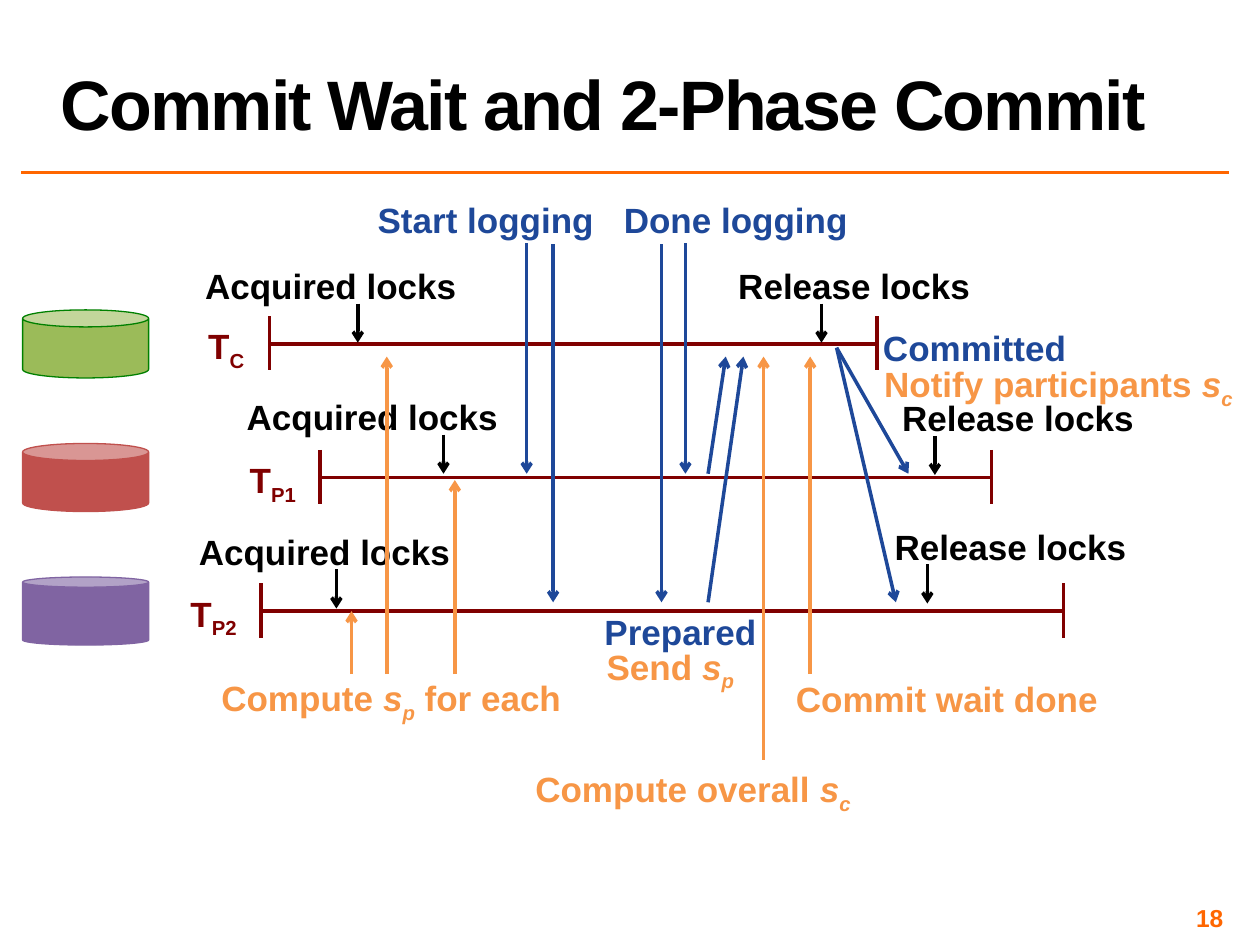
"""Build a slide on commit wait and two-phase commit as three timelines."""
import lxml.etree
import pptx
import pptx.dml.color
import pptx.enum.shapes
import pptx.enum.text
import pptx.oxml.ns
import pptx.util

Inches = pptx.util.Inches
Pt = pptx.util.Pt
ALIGN = pptx.enum.text.PP_ALIGN
ANCHOR = pptx.enum.text.MSO_ANCHOR

THEME = {
    "font": "Arial", "title": 40, "label": 20, "page": 14, "line": 2, "edge": 0.75,
    "black": "000000", "rule": "FF6600", "time": "800000", "blue": "1E4899",
    "orange": "F79646", "lime": "9BBB59", "green": "008000", "red": "C0504D",
    "violet": "8064A2",
}
TITLE = "Commit Wait and 2-Phase Commit"
PAGE = "18"

TOP, STEP = 2.73, 1.06
ROWS = [
    {"sub": "C", "name": 1.49, "span": (2.14, 6.96), "can": ("lime", "green", 0.25),
     "locks": [("Acquired locks", 1.52, 2.05, 2.21, 2.84),
               ("Release locks", 5.75, 2.05, 2.06, 6.52)]},
    {"sub": "P1", "name": 1.86, "span": (2.54, 7.87), "can": ("red", "red", 0.25),
     "locks": [("Acquired locks", 1.85, 3.09, 2.21, 3.52),
               ("Release locks", 7.05, 3.1, 2.06, 7.42)]},
    {"sub": "P2", "name": 1.39, "span": (2.07, 8.44), "can": ("violet", "violet", 0.15),
     "locks": [("Acquired locks", 1.47, 4.16, 2.21, 2.67),
               ("Release locks", 6.99, 4.12, 2.06, 7.36)]},
]
ARROWS = {
    "blue": [
        (4.18, 1.93, 4.18, 3.76), (5.44, 1.93, 5.44, 3.76),
        (4.39, 1.94, 4.39, 4.78), (5.25, 1.94, 5.25, 4.78),
        (5.62, 3.76, 5.76, 2.83), (5.62, 4.78, 5.9, 2.83),
        (6.64, 2.76, 7.21, 3.76), (6.64, 2.76, 7.11, 4.78),
    ],
    "orange": [
        (2.79, 5.35, 2.79, 4.85), (3.07, 5.35, 3.07, 2.83),
        (3.61, 5.35, 3.61, 3.81), (6.06, 6.03, 6.06, 2.83),
        (6.43, 5.35, 6.43, 2.83),
    ],
}
S_C = [("s", "i"), ("c", "i sub")]
S_P = [("s", "i"), ("p", "i sub")]
LABELS = [
    ([("Start logging", "")], "blue", 2.89, 1.53, 1.93),
    ([("Done logging", "")], "blue", 4.84, 1.53, 2),
    ([("Committed", "")], "blue", 6.9, 2.54, 1.67),
    ([("Notify participants ", "")] + S_C, "orange", 6.9, 2.83, 3),
    ([("Prepared", "")], "blue", 4.69, 4.8, 1.42),
    ([("Send ", "")] + S_P, "orange", 4.7, 5.07, 1.24),
    ([("Compute ", "")] + S_P + [(" for each", "")], "orange", 1.61, 5.32, 2.99),
    ([("Commit wait done", "")], "orange", 6.21, 5.33, 2.61),
    ([("Compute overall ", "")] + S_C, "orange", 4.13, 6.04, 2.74),
]


def tint(name):
    return pptx.dml.color.RGBColor.from_string(THEME[name])


def add_run(para, text, size, color, style=""):
    run = para.add_run()
    run.text = text
    font = run.font
    font.name, font.size, font.bold = THEME["font"], Pt(THEME[size]), True
    font.italic = "i" in style.split()
    font.color.rgb = tint(color)
    if "sub" in style:
        run._r.get_or_add_rPr().set("baseline", "-25000")
    return run


def add_line(slide, ends, color, arrow=False):
    line = slide.shapes.add_connector(
        pptx.enum.shapes.MSO_CONNECTOR.STRAIGHT, *[Inches(n) for n in ends])
    line.line.color.rgb = tint(color)
    line.line.width = Pt(THEME["line"])
    if arrow:
        lxml.etree.SubElement(line.line._get_or_add_ln(),
                              pptx.oxml.ns.qn("a:tailEnd"), type="arrow")
    lxml.etree.SubElement(line._element.spPr, pptx.oxml.ns.qn("a:effectLst"))


def add_label(slide, runs, color, left, top, width):
    box = slide.shapes.add_textbox(Inches(left), Inches(top), Inches(width), Inches(0.44))
    box.text_frame.word_wrap = False
    para = box.text_frame.paragraphs[0]
    para.alignment = ALIGN.CENTER
    for text, style in runs:
        add_run(para, text, "label", color, style)


def add_can(slide, mid, fill, edge, depth):
    can = slide.shapes.add_shape(pptx.enum.shapes.MSO_SHAPE.CAN, Inches(0.18),
                                 Inches(mid - 0.27), Inches(1), Inches(0.54))
    can.adjustments[0] = depth
    can.shadow.inherit = False
    can.fill.solid()
    can.fill.fore_color.rgb = tint(fill)
    can.line.color.rgb = tint(edge)
    can.line.width = Pt(THEME["edge"])


def add_row(slide, row, mid):
    start, end = row["span"]
    add_line(slide, (start, mid, end, mid), "time")
    for x in row["span"]:
        add_line(slide, (x, mid - 0.22, x, mid + 0.21), "time")
    add_can(slide, mid, *row["can"])
    add_label(slide, [("T", ""), (row["sub"], "sub")], "time", row["name"], mid - 0.2, 0.61)
    for text, left, top, width, x in row["locks"]:
        add_label(slide, [(text, "")], "black", left, top, width)
        add_line(slide, (x, top + 0.36, x, top + 0.67), "black", True)


def add_title(slide):
    title = slide.shapes.title
    title.left, title.top = Inches(0.38), Inches(0.02)
    title.width, title.height = Inches(9.37), Inches(1.17)
    frame = title.text_frame
    frame.vertical_anchor = ANCHOR.BOTTOM
    frame.auto_size = pptx.enum.text.MSO_AUTO_SIZE.NONE
    para = frame.paragraphs[0]
    para.alignment, para.line_spacing = ALIGN.LEFT, 0.8
    run = add_run(para, TITLE, "title", "black")
    run._r.get_or_add_rPr().set("spc", "-100")


def add_page(slide):
    box = slide.shapes.add_textbox(Inches(7.42), Inches(7.17), Inches(2.33), Inches(0.23))
    frame = box.text_frame
    frame.word_wrap = True
    frame.vertical_anchor = ANCHOR.MIDDLE
    frame.margin_left = frame.margin_right = Inches(0.04)
    frame.margin_top = frame.margin_bottom = Inches(0.04)
    para = frame.paragraphs[0]
    para.alignment = ALIGN.RIGHT
    add_run(para, PAGE, "page", "rule")


def main():
    deck = pptx.Presentation()
    deck.slide_width, deck.slide_height = Inches(10), Inches(7.5)
    slide = deck.slides.add_slide(deck.slide_layouts[5])
    add_title(slide)
    add_line(slide, (0.17, 1.37, 9.75, 1.37), "rule")
    for i, row in enumerate(ROWS):
        add_row(slide, row, TOP + i * STEP)
    for color, group in ARROWS.items():
        for ends in group:
            add_line(slide, ends, color, True)
    for label in LABELS:
        add_label(slide, *label)
    add_page(slide)
    deck.save("out.pptx")


if __name__ == "__main__":
    main()
